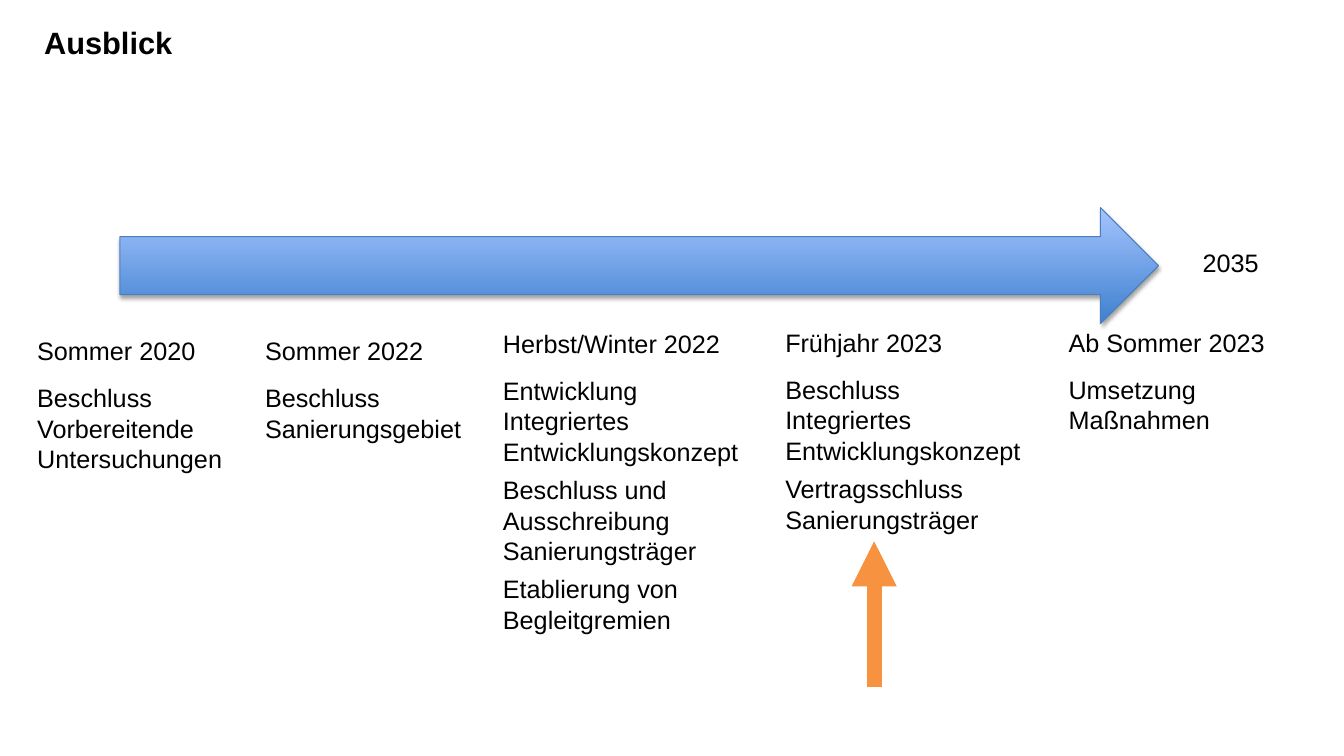
from dataclasses import dataclass

from lxml.etree import SubElement
from pptx import Presentation
from pptx.dml.color import RGBColor
from pptx.enum.shapes import MSO_CONNECTOR, MSO_SHAPE
from pptx.enum.text import MSO_ANCHOR, MSO_AUTO_SIZE
from pptx.oxml.ns import qn
from pptx.slide import Slide
from pptx.util import Inches, Pt

BLACK = RGBColor(0x00, 0x00, 0x00)
ARROW_DARK = RGBColor(0x3F, 0x80, 0xCE)
ARROW_LIGHT = RGBColor(0xA4, 0xC4, 0xFF)
ARROW_EDGE = RGBColor(0x4B, 0x7E, 0xBC)
ORANGE = RGBColor(0xF6, 0x92, 0x40)
FONT = "Arial"


@dataclass
class Milestone:
    left: float
    top: float
    width: float
    height: float
    date: str
    steps: tuple[str, ...] = ()


MILESTONES = [
    Milestone(0.27, 3.28, 2.21, 1.48, "Sommer 2020",
              ("Beschluss Vorbereitende Untersuchungen",)),
    Milestone(2.53, 3.28, 2.21, 1.18, "Sommer 2022",
              ("Beschluss Sanierungsgebiet",)),
    Milestone(4.89, 3.21, 2.56, 3.16, "Herbst/Winter 2022",
              ("Entwicklung Integriertes Entwicklungskonzept",
               "Beschluss und Ausschreibung Sanierungsträger",
               "Etablierung von Begleitgremien")),
    Milestone(7.69, 3.2, 2.56, 2.17, "Frühjahr 2023",
              ("Beschluss Integriertes Entwicklungskonzept",
               "Vertragsschluss Sanierungsträger")),
    Milestone(10.5, 3.2, 2.56, 1.18, "Ab Sommer 2023",
              ("Umsetzung Maßnahmen",)),
    Milestone(11.83, 2.4, 1.13, 0.4, "2035"),
]


def add_title(page: Slide, title: str) -> None:
    box = page.shapes.add_textbox(Inches(0.34), Inches(0.18), Inches(12), Inches(0.48))
    frame = box.text_frame
    frame.word_wrap = True
    frame.vertical_anchor = MSO_ANCHOR.MIDDLE
    frame.text = title
    font = frame.paragraphs[0].font
    font.name, font.size, font.bold = FONT, Pt(22), True
    font.color.rgb = BLACK


def add_milestone(page: Slide, milestone: Milestone) -> None:
    box = page.shapes.add_textbox(Inches(milestone.left), Inches(milestone.top),
                                  Inches(milestone.width), Inches(milestone.height))
    frame = box.text_frame
    frame.word_wrap = True
    frame.auto_size = MSO_AUTO_SIZE.SHAPE_TO_FIT_TEXT
    frame.text = "\n".join((milestone.date, *milestone.steps))
    for index, para in enumerate(frame.paragraphs):
        if index:
            para.space_before = Pt(12 if index == 1 else 6)
        para.font.name, para.font.size = FONT, Pt(18)
        para.font.color.rgb = BLACK


def add_time_arrow(page: Slide) -> None:
    arrow = page.shapes.add_shape(MSO_SHAPE.RIGHT_ARROW, Inches(1.19), Inches(2.06),
                                  Inches(10.3), Inches(1.15))
    arrow.fill.gradient()
    arrow.fill.gradient_angle = 90
    for stop, position, color in zip(arrow.fill.gradient_stops, (0, 1),
                                     (ARROW_DARK, ARROW_LIGHT)):
        stop.position = position
        stop.color.rgb = color
    arrow.line.color.rgb = ARROW_EDGE
    arrow.line.width = Pt(0.75)

    # Soft shadow straight below
    arrow.shadow.inherit = False
    effects = arrow.element.spPr.find(qn("a:effectLst"))
    shadow = SubElement(effects, qn("a:outerShdw"), blurRad=str(Pt(3.1)),
                        dist=str(Pt(1.8)), dir="5400000", rotWithShape="0")
    color = SubElement(shadow, qn("a:srgbClr"), val=str(BLACK))
    SubElement(color, qn("a:alpha"), val="35000")


def add_pointer(page: Slide) -> None:
    pointer = page.shapes.add_connector(MSO_CONNECTOR.STRAIGHT, Inches(8.67), Inches(6.82),
                                        Inches(8.67), Inches(5.37))
    pointer.line.color.rgb = ORANGE
    pointer.line.width = Pt(10.75)
    properties = pointer.element.spPr
    SubElement(properties.find(qn("a:ln")), qn("a:tailEnd"), type="triangle")
    SubElement(properties, qn("a:effectLst"))


def main() -> None:
    deck = Presentation()
    deck.slide_width, deck.slide_height = Inches(13.33), Inches(7.5)
    page = deck.slides.add_slide(deck.slide_layouts[6])

    add_title(page, "Ausblick")
    add_time_arrow(page)
    for milestone in MILESTONES:
        add_milestone(page, milestone)
    add_pointer(page)

    deck.save("out.pptx")


if __name__ == "__main__":
    main()
